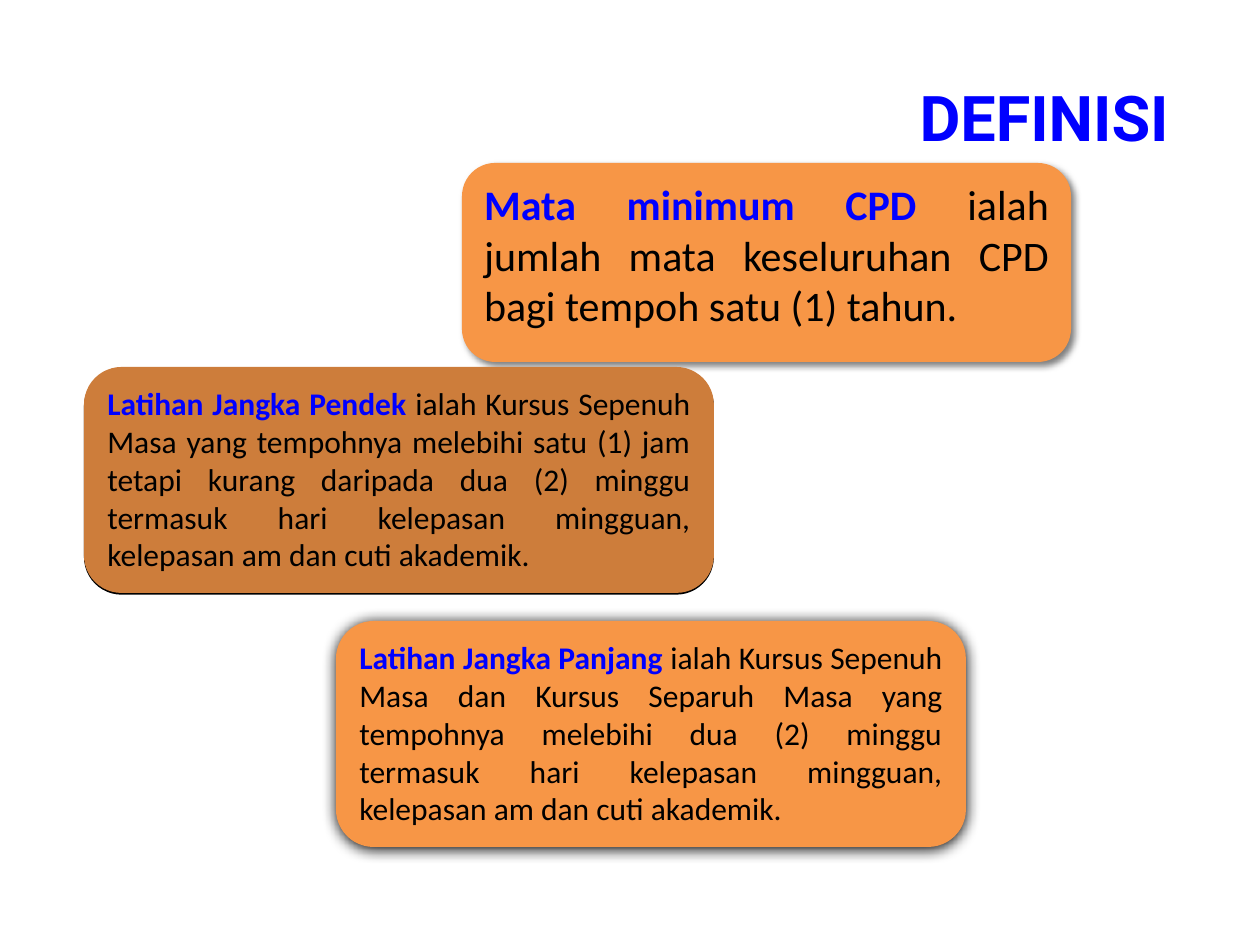
from dataclasses import dataclass

from lxml import etree
from pptx import Presentation, util as u
from pptx.dml.color import RGBColor
from pptx.enum import shapes, text
from pptx.oxml.ns import qn

PX_PER_INCH = 126
COLORS = {
    "term": "0000FF",
    "body": "000000",
    "orange": "F79646",
    "brown": "CD7D3B",
    "shadow": "000000",
}


@dataclass(frozen=True)
class Shadow:
    blur: float  # points
    distance: float  # points
    angle: int  # degrees
    opacity: int  # percent


@dataclass(frozen=True)
class Definition:
    left: int
    top: int
    width: int
    height: int
    term: str
    meaning: str
    size: int
    fill: str
    shadow: Shadow


DEFINITIONS = [
    Definition(462, 163, 609, 199, "Mata minimum CPD ",
               "ialah jumlah mata keseluruhan CPD bagi tempoh satu (1) tahun.",
               24, "orange", Shadow(4, 3, 45, 50)),
    Definition(84, 367, 630, 226, "Latihan Jangka Pendek ",
               "ialah Kursus Sepenuh Masa yang tempohnya melebihi satu (1) jam "
               "tetapi kurang daripada dua (2) minggu termasuk hari kelepasan "
               "mingguan, kelepasan am dan cuti akademik.",
               18, "brown", Shadow(0, 1, 90, 100)),
    Definition(336, 621, 630, 226, "Latihan Jangka Panjang ",
               "ialah Kursus Sepenuh Masa dan Kursus Separuh Masa yang tempohnya "
               "melebihi dua (2) minggu termasuk hari kelepasan mingguan, "
               "kelepasan am dan cuti akademik.",
               18, "orange", Shadow(8.5, 1, 90, 100)),
]


def px(length: int) -> int:
    return u.Inches(length / PX_PER_INCH)


def add_words(paragraph, words: str, *, size: int, color: str,
              font: str = "Calibri", bold: bool = False) -> None:
    run = paragraph.add_run()
    run.text = words
    run.font.name = font
    run.font.size = u.Pt(size)
    run.font.bold = bold
    run.font.color.rgb = RGBColor.from_string(COLORS[color])


def set_shadow(panel, shadow: Shadow) -> None:
    panel.shadow.inherit = False
    effects = panel._element.spPr.find(qn("a:effectLst"))
    outer = etree.SubElement(
        effects, qn("a:outerShdw"), blurRad=str(u.Pt(shadow.blur)),
        dist=str(u.Pt(shadow.distance)), dir=str(shadow.angle * 60000),
        algn="ctr", rotWithShape="0")
    color = etree.SubElement(outer, qn("a:srgbClr"), val=COLORS["shadow"])
    etree.SubElement(color, qn("a:alpha"), val=str(shadow.opacity * 1000))


def add_title(slide, title: str) -> None:
    heading = slide.shapes.add_textbox(px(292), px(38), px(905), px(157))
    frame = heading.text_frame
    frame.word_wrap = True
    frame.vertical_anchor = text.MSO_ANCHOR.MIDDLE
    frame.paragraphs[0].alignment = text.PP_ALIGN.RIGHT
    add_words(frame.paragraphs[0], title, size=36, color="term",
              font="Roboto", bold=True)


def add_definition(slide, item: Definition) -> None:
    panel = slide.shapes.add_shape(
        shapes.MSO_SHAPE.ROUNDED_RECTANGLE,
        px(item.left), px(item.top), px(item.width), px(item.height))
    panel.fill.solid()
    panel.fill.fore_color.rgb = RGBColor.from_string(COLORS[item.fill])
    panel.line.fill.background()
    set_shadow(panel, item.shadow)

    frame = panel.text_frame
    frame.word_wrap = True
    frame.vertical_anchor = text.MSO_ANCHOR.TOP
    paragraph = frame.paragraphs[0]
    paragraph.alignment = text.PP_ALIGN.JUSTIFY
    add_words(paragraph, item.term, size=item.size, color="term", bold=True)
    add_words(paragraph, item.meaning, size=item.size, color="body")


def main() -> None:
    deck = Presentation()
    deck.slide_width, deck.slide_height = u.Inches(10), u.Inches(7.5)
    slide = deck.slides.add_slide(deck.slide_layouts[6])

    # Heading
    add_title(slide, "DEFINISI ")

    # Definition panels
    for item in DEFINITIONS:
        add_definition(slide, item)

    deck.save("out.pptx")


if __name__ == "__main__":
    main()
